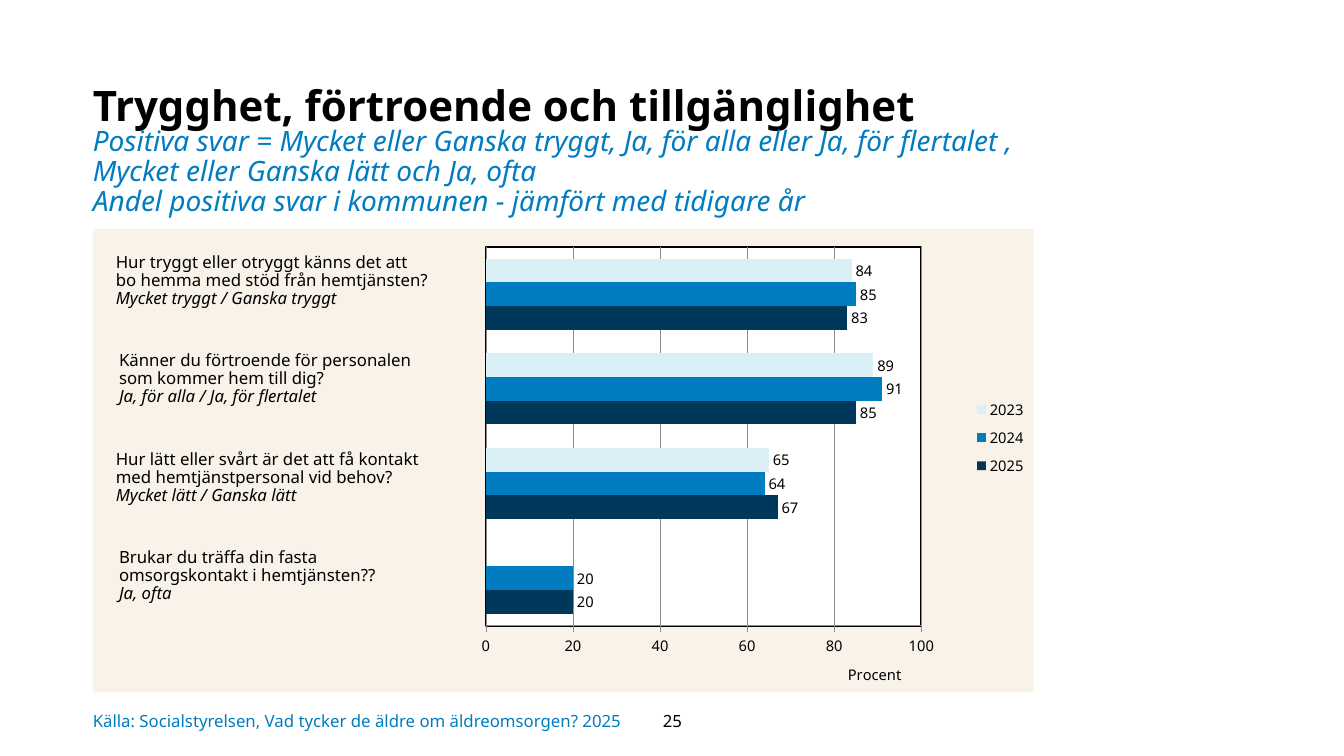
from dataclasses import dataclass

from lxml import etree
from pptx import Presentation
from pptx.chart.data import CategoryChartData
from pptx.dml.color import RGBColor
from pptx.enum.chart import XL_CHART_TYPE, XL_LABEL_POSITION, XL_LEGEND_POSITION, XL_TICK_MARK
from pptx.enum.text import MSO_ANCHOR, MSO_AUTO_SIZE, PP_ALIGN
from pptx.oxml import parse_xml
from pptx.oxml.ns import nsdecls, qn
from pptx.util import Cm, Pt

BARS = XL_CHART_TYPE.BAR_CLUSTERED
OUT_END = XL_LABEL_POSITION.OUTSIDE_END
RIGHT = XL_LEGEND_POSITION.RIGHT
TICK_OUT, TICK_NONE = XL_TICK_MARK.OUTSIDE, XL_TICK_MARK.NONE
TOP, MIDDLE = MSO_ANCHOR.TOP, MSO_ANCHOR.MIDDLE
NO_FIT = MSO_AUTO_SIZE.NONE
LEFT, CENTER = PP_ALIGN.LEFT, PP_ALIGN.CENTER

TITLE = "Trygghet, förtroende och tillgänglighet"
INTRO = [
    "Positiva svar = Mycket eller Ganska tryggt, Ja, för alla eller Ja, för flertalet , "
    "Mycket eller Ganska lätt och Ja, ofta",
    "Andel positiva svar i kommunen - jämfört med tidigare år",
]
ITEMS = [  # question lines, positive answers
    (["Hur tryggt eller otryggt känns det att", "bo hemma med stöd från hemtjänsten?"],
     "Mycket tryggt / Ganska tryggt"),
    (["Känner du förtroende för personalen", "som kommer hem till dig?"],
     "Ja, för alla / Ja, för flertalet"),
    (["Hur lätt eller svårt är det att få kontakt", "med hemtjänstpersonal vid behov?"],
     "Mycket lätt / Ganska lätt"),
    (["Brukar du träffa din fasta omsorgskontakt i hemtjänsten??"], "Ja, ofta"),
]
CATS = ["1", "2", "3", "4"]
YEARS = [  # name, values from the bottom group up, colour
    ("2025", (20, 67, 85, 83), "00385C"),
    ("2024", (20, 64, 91, 85), "017CC1"),
    ("2023", (None, 65, 89, 84), "DBF0F6"),
]
UNIT = "Procent"
SOURCE = "Källa: Socialstyrelsen, Vad tycker de äldre om äldreomsorgen? 2025"
PAGE = "25"


@dataclass(frozen=True)
class Theme:
    font: str = "Noto Sans"
    ink: str = "000000"
    accent: str = "017CC1"
    panel: str = "F8F2E8"
    plot: str = "FFFFFF"
    grid: str = "8C8C8C"
    head: float = 30
    lead: float = 20
    body: float = 12
    chart: float = 10.5


THEME = Theme()
EDGE = 2.34


def style(font, size, color=THEME.ink, bold=False, italic=False):
    font.name, font.size = THEME.font, Pt(size)
    font.color.rgb = RGBColor.from_string(color)
    font.bold, font.italic = bold, italic


def place(shape, box):
    shape.left, shape.top, shape.width, shape.height = map(Cm, box)


def write(frame, lines, size, color=THEME.ink, space=1.0, align=LEFT):
    """Fill one paragraph from (text, bold, italic) lines joined by line breaks."""
    para = frame.paragraphs[0]
    para.line_spacing, para.alignment = space, align
    for pos, (text, bold, italic) in enumerate(lines):
        if pos:
            para.add_line_break()
        run = para.add_run()
        run.text = text
        style(run.font, size, color, bold, italic)


def add_text(slide, box, lines, size, color=THEME.ink, space=1.0,
             align=LEFT, anchor=TOP, inset=True):
    frame = slide.shapes.add_textbox(*map(Cm, box)).text_frame
    frame.word_wrap, frame.vertical_anchor = True, anchor
    if not inset:
        frame.margin_left = frame.margin_top = frame.margin_right = frame.margin_bottom = 0
    write(frame, lines, size, color, space, align)


def layout(x, y, w=None, h=None, inner=False):
    """Build a manual chart layout in fractions of the chart area."""
    parts = [("layoutTarget", "inner")] if inner else []
    parts += [("xMode", "edge"), ("yMode", "edge"), ("x", x), ("y", y)]
    if w:
        parts += [("w", w), ("h", h)]
    node = etree.Element(qn("c:layout"))
    manual = etree.SubElement(node, qn("c:manualLayout"))
    for tag, val in parts:
        etree.SubElement(manual, qn("c:" + tag)).set("val", str(val))
    return node


def set_layout(parent, node, after=None):
    """Replace the layout of a chart part, after the named child or first."""
    for old in parent.findall(qn("c:layout")):
        parent.remove(old)
    if after:
        parent.find(qn(after)).addnext(node)
    else:
        parent.insert(0, node)


def area(fill, line):
    return parse_xml(
        f'<c:spPr {nsdecls("c", "a")}><a:solidFill><a:srgbClr val="{fill}"/>'
        f'</a:solidFill>{line}</c:spPr>')


def thin(line):
    line.color.rgb = RGBColor.from_string(THEME.grid)
    line.width = Pt(0.5)


def add_axes(chart):
    chart.category_axis.visible = False
    axis = chart.value_axis
    axis.minimum_scale, axis.maximum_scale, axis.major_unit = 0, 100, 20
    axis.major_tick_mark, axis.minor_tick_mark = TICK_OUT, TICK_NONE
    axis.has_major_gridlines = True
    thin(axis.major_gridlines.format.line)
    thin(axis.format.line)
    style(axis.tick_labels.font, THEME.chart)
    title = axis.axis_title
    write(title.text_frame, [(UNIT, False, False)], THEME.chart)
    set_layout(title._element, layout(0.8, 0.93), "c:tx")


def add_bars(slide):
    data = CategoryChartData()
    data.categories = CATS
    for name, vals, _ in YEARS:
        data.add_series(name, vals)
    box = map(Cm, (EDGE, 5.77, 23.7, 11.68))
    chart = slide.shapes.add_chart(BARS, *box, data).chart
    chart.has_title = False
    style(chart.font, THEME.chart)
    plot = chart.plots[0]
    plot.gap_width, plot.overlap, plot.vary_by_categories = 100, 0, False
    for series, (_, _, color) in zip(plot.series, YEARS):
        series.format.fill.solid()
        series.format.fill.fore_color.rgb = RGBColor.from_string(color)
        labels = series.data_labels
        labels.show_value, labels.position = True, OUT_END
        style(labels.font, THEME.chart)
    add_axes(chart)
    chart.has_legend = True
    legend = chart.legend
    legend.position, legend.include_in_layout = RIGHT, False
    style(legend.font, THEME.chart)
    set_layout(legend._element, layout(0.93, 0.35, 0.07, 0.2), "c:legendPos")
    space = chart._chartSpace
    field = space.chart.plotArea
    set_layout(field, layout(0.418, 0.039, 0.463, 0.817, inner=True))
    border = (f'<a:ln w="{Pt(1.5)}"><a:solidFill><a:srgbClr val="{THEME.ink}"/>'
              '</a:solidFill></a:ln>')
    field.append(area(THEME.plot, border))
    space.chart.addnext(area(THEME.panel, "<a:ln><a:noFill/></a:ln>"))


def main():
    deck = Presentation()
    deck.slide_width, deck.slide_height = Cm(33.87), Cm(19.05)
    slide = deck.slides.add_slide(deck.slide_layouts[5])

    title = slide.shapes.title
    place(title, (EDGE, 1.88, 25.35, 1.42))
    frame = title.text_frame
    frame.auto_size, frame.vertical_anchor, frame.word_wrap = NO_FIT, TOP, True
    frame.margin_left = frame.margin_top = 0
    write(frame, [(TITLE, True, False)], THEME.head, space=1.1)

    add_text(slide, (EDGE, 3.2, 24.59, 2.64), [(text, False, True) for text in INTRO],
             THEME.lead, THEME.accent, 0.9, inset=False)
    add_bars(slide)
    for row, (ask, reply) in enumerate(ITEMS):
        lines = [(text, False, False) for text in ask] + [(reply, False, True)]
        left = 2.67 + 0.08 * (row % 2)
        width = 8.28 if row % 2 else 8.84
        add_text(slide, (left, 6.27 + 2.48 * row, width, 1.8), lines, THEME.body, space=0.9)
    add_text(slide, (EDGE, 17.68, 15.01, 0.99), [(SOURCE, False, False)],
             THEME.body, THEME.accent, anchor=MIDDLE, inset=False)
    add_text(slide, (15.65, 17.65, 2.59, 1.02), [(PAGE, False, False)],
             THEME.body, align=CENTER, anchor=MIDDLE)
    deck.save("out.pptx")


if __name__ == "__main__":
    main()
